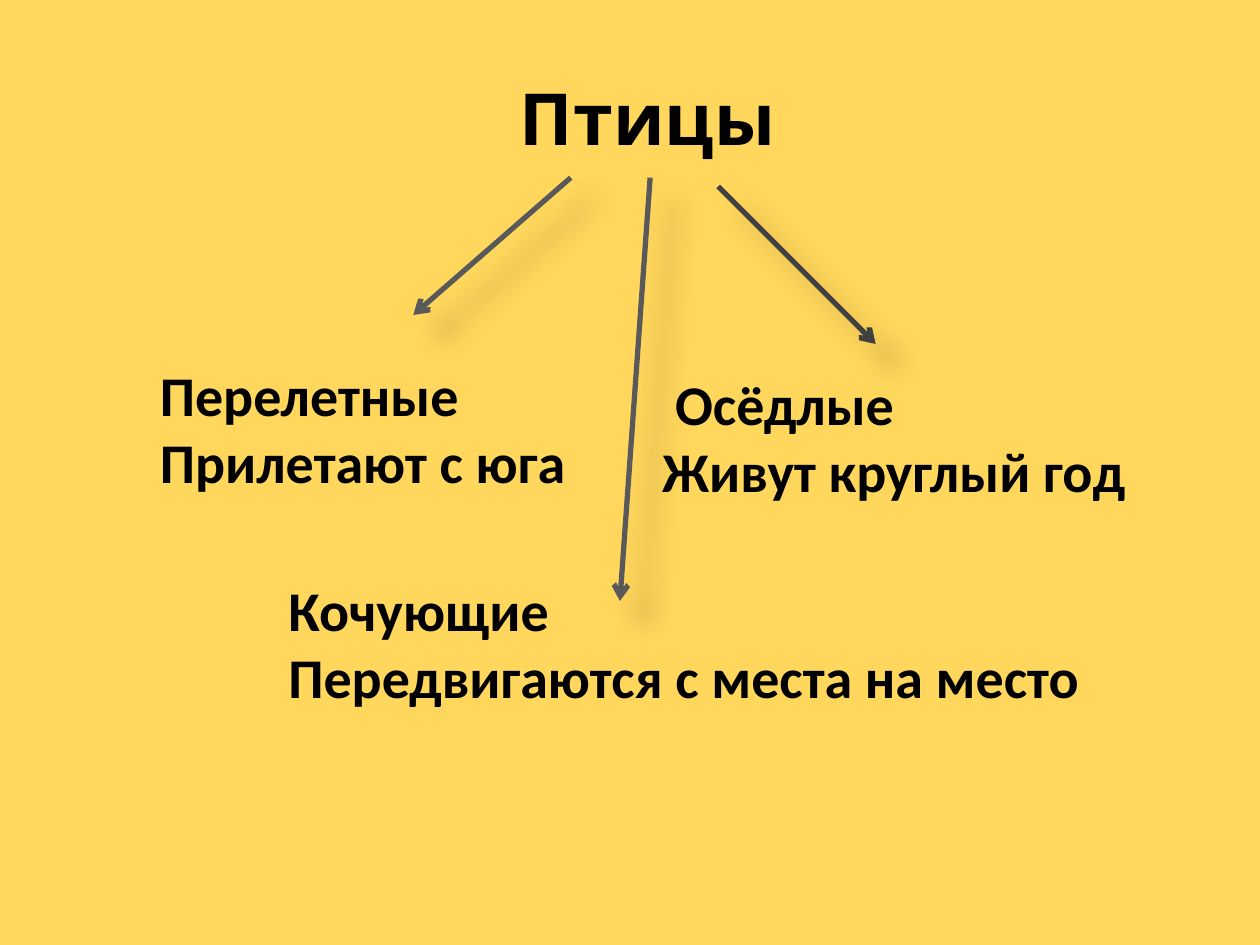
"""Build a slide that sorts birds into three groups."""
from lxml import etree
from pptx import Presentation
from pptx.dml.color import RGBColor
from pptx.enum.shapes import MSO_CONNECTOR
from pptx.enum.text import MSO_ANCHOR, MSO_AUTO_SIZE, PP_ALIGN
from pptx.oxml import parse_xml
from pptx.oxml.ns import nsdecls, qn
from pptx.util import Inches, Pt

BACKGROUND = RGBColor(0xFF, 0xD7, 0x5C)
BLACK = RGBColor(0, 0, 0)
GRAY = RGBColor(0x59, 0x59, 0x59)
DARK_GRAY = RGBColor(0x40, 0x40, 0x40)
SHADOW = (
    f'<a:effectLst {nsdecls("a")}><a:outerShdw blurRad="{Pt(15)}" dist="{Pt(18)}" '
    'dir="2700000" algn="tl" rotWithShape="0"><a:srgbClr val="000000">'
    '<a:alpha val="26000"/></a:srgbClr></a:outerShdw></a:effectLst>'
)


def write_text(paragraph, text, font="Calibri", size=32, color=BLACK,
               bold=True, align=PP_ALIGN.LEFT, indent=0):
    paragraph.alignment = align
    if indent:
        properties = paragraph._p.get_or_add_pPr()
        properties.set("marL", str(Inches(indent)))
        properties.set("indent", "0")
    run = paragraph.add_run()
    run.text = text
    run.font.name = font
    run.font.size = Pt(size)
    run.font.bold = bold
    run.font.color.rgb = color


class BirdSlide:
    def __init__(self, presentation):
        self.slide = presentation.slides.add_slide(presentation.slide_layouts[6])
        fill = self.slide.background.fill
        fill.solid()
        fill.fore_color.rgb = BACKGROUND

    def add_box(self, left, top, width, height):
        box = self.slide.shapes.add_textbox(
            Inches(left), Inches(top), Inches(width), Inches(height))
        return box.text_frame

    def title(self, text, left, top, width, height):
        frame = self.add_box(left, top, width, height)
        frame.word_wrap = True
        frame.vertical_anchor = MSO_ANCHOR.MIDDLE
        write_text(frame.paragraphs[0], text, font="Noto Sans", size=41,
                   align=PP_ALIGN.CENTER)

    def group(self, name, habit, left, top, width, indent=0):
        frame = self.add_box(left, top, width, 1.18)
        frame.word_wrap = False
        frame.auto_size = MSO_AUTO_SIZE.SHAPE_TO_FIT_TEXT
        write_text(frame.paragraphs[0], name, indent=indent)
        write_text(frame.add_paragraph(), habit)

    def arrow(self, start, end, color):
        connector = self.slide.shapes.add_connector(
            MSO_CONNECTOR.STRAIGHT, *map(Inches, start + end))
        connector.line.color.rgb = color
        connector.line.width = Pt(3)
        etree.SubElement(connector.line._get_or_add_ln(), qn("a:tailEnd"), type="arrow")
        connector._element.spPr.append(parse_xml(SHADOW))


def main():
    presentation = Presentation()
    presentation.slide_width = Inches(10)
    presentation.slide_height = Inches(7.5)

    birds = BirdSlide(presentation)
    birds.title("Птицы", 0.64, 0.3, 9, 1.25)
    birds.group("Перелетные", "Прилетают с юга", 1.17, 2.81, 3.45)
    birds.group("Осёдлые", "Живут круглый год", 5.16, 2.88, 3.9, indent=0.1)
    birds.group("Кочующие", "Передвигаются с места на место", 2.19, 4.52, 6.54)
    birds.arrow((4.53, 1.41), (3.28, 2.5), GRAY)
    birds.arrow((5.7, 1.48), (6.95, 2.73), DARK_GRAY)
    birds.arrow((5.16, 1.41), (4.92, 4.77), GRAY)

    presentation.save("out.pptx")


if __name__ == "__main__":
    main()
